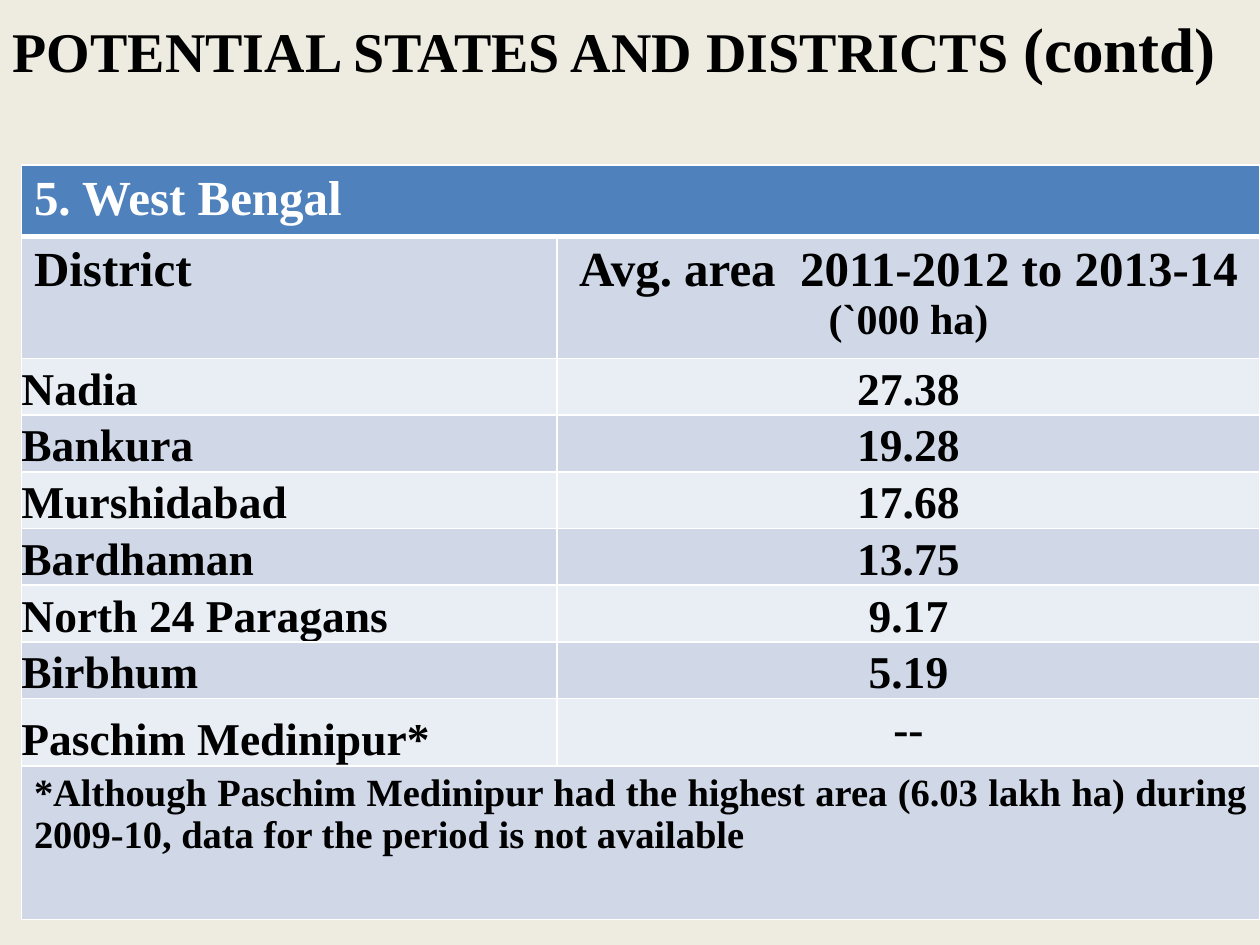
from lxml.etree import SubElement
from pptx import Presentation
from pptx.dml.color import RGBColor
from pptx.enum.text import MSO_ANCHOR, PP_ALIGN
from pptx.oxml.ns import qn
from pptx.util import Inches, Pt

COLOURS = {
    "page": "EEECE1", "heading": "4F81BD", "dark_band": "D0D8E8",
    "light_band": "E9EDF4", "rule": "FFFFFF", "black": "000000", "white": "FFFFFF",
}
FONT = {"name": "Times New Roman", "bold": True}
COLUMNS = (4.25, 5.58)
ROWS = (0.54, 0.9, *[0.45] * 6, 0.5, 1.22)
TIGHT = {
    "margin_left": 0, "margin_right": 0, "margin_top": 0, "margin_bottom": 0,
    "vertical_anchor": MSO_ANCHOR.BOTTOM,
}
AREAS = (
    ("Nadia", "27.38"), ("Bankura", "19.28"), ("Murshidabad", "17.68"),
    ("Bardhaman", "13.75"), ("North 24 Paragans", "9.17"), ("Birbhum", "5.19"),
    ("Paschim Medinipur*", "--"),
)
NOTE = ("*Although Paschim Medinipur had the highest area (6.03 lakh ha) during "
        "2009-10, data for the period is not available")


def colour(name):
    """Return the named colour."""
    return RGBColor.from_string(COLOURS[name])


def apply_format(target, values):
    """Set every attribute in a dict of format values."""
    for name, value in values.items():
        setattr(target, name, value)


def write_text(frame, spans, align, ink="black"):
    """Write (text, size) spans into the frame's first paragraph."""
    para = frame.paragraphs[0]
    para.alignment = align
    for text, size in spans:
        span = para.add_run()
        span.text = text
        apply_format(span.font, {**FONT, "size": Pt(size)})
        span.font.color.rgb = colour(ink)


def add_title(page, deck):
    """Add the heading across the top of the page."""
    box = page.shapes.add_textbox(0, 0, int(deck.slide_width * 0.975), int(deck.slide_height * 0.1))
    apply_format(box.text_frame, {**TIGHT, "word_wrap": True, "vertical_anchor": MSO_ANCHOR.MIDDLE})
    write_text(box.text_frame, [("POTENTIAL STATES AND DISTRICTS ", 32), ("(contd)", 36)],
               PP_ALIGN.CENTER)


def rule_cell(cell, top, bottom):
    """Draw the cell's four borders, with the given top and bottom widths."""
    properties = cell._tc.get_or_add_tcPr()
    for position, (side, width) in enumerate((("lnL", 1), ("lnR", 1), ("lnT", top), ("lnB", bottom))):
        line = SubElement(properties, qn(f"a:{side}"), w=str(Pt(width)))
        fill = SubElement(line, qn("a:solidFill"))
        SubElement(fill, qn("a:srgbClr"), val=COLOURS["rule"])
        properties.insert(position, line)


def add_grid(page):
    """Add the table with its bands, rules and merged rows."""
    frame = page.shapes.add_table(len(ROWS), len(COLUMNS), Inches(0.17), Inches(1.31),
                                  Inches(sum(COLUMNS)), Inches(sum(ROWS)))
    table = frame.table
    for column, width in zip(table.columns, COLUMNS):
        column.width = Inches(width)
    for number, (row, height) in enumerate(zip(table.rows, ROWS)):
        row.height = Inches(height)
        band = "heading" if number == 0 else "dark_band" if number % 2 else "light_band"
        for cell in row.cells:
            cell.fill.solid()
            cell.fill.fore_color.rgb = colour(band)
            rule_cell(cell, 3 if number == 1 else 1, 3 if number == 0 else 1)
    for number in (0, len(ROWS) - 1):
        table.cell(number, 0).merge(table.cell(number, 1))
    return table


def fill_grid(table):
    """Write the headings, the areas by district and the note."""
    write_text(table.cell(0, 0).text_frame, [("5. West Bengal", 28)], PP_ALIGN.LEFT, "white")
    write_text(table.cell(1, 0).text_frame, [("District", 28)], PP_ALIGN.LEFT)
    write_text(table.cell(1, 1).text_frame,
               [("Avg. area  2011-2012 to 2013-14 ", 28), ("(`000 ha)", 24)], PP_ALIGN.CENTER)
    for number, record in enumerate(AREAS, start=2):
        for column, (text, align) in enumerate(zip(record, (PP_ALIGN.LEFT, PP_ALIGN.CENTER))):
            cell = table.cell(number, column)
            if text != "--":
                apply_format(cell, TIGHT)
            write_text(cell.text_frame, [(text, 26)], align)
    write_text(table.cell(len(ROWS) - 1, 0).text_frame, [(NOTE, 22)], PP_ALIGN.JUSTIFY)


def main():
    """Build and save the deck."""
    deck = Presentation()
    apply_format(deck, {"slide_width": Inches(10), "slide_height": Inches(7.5)})
    page = deck.slides.add_slide(deck.slide_layouts[6])
    page.background.fill.solid()
    page.background.fill.fore_color.rgb = colour("page")
    add_title(page, deck)
    fill_grid(add_grid(page))
    deck.save("out.pptx")


if __name__ == "__main__":
    main()
